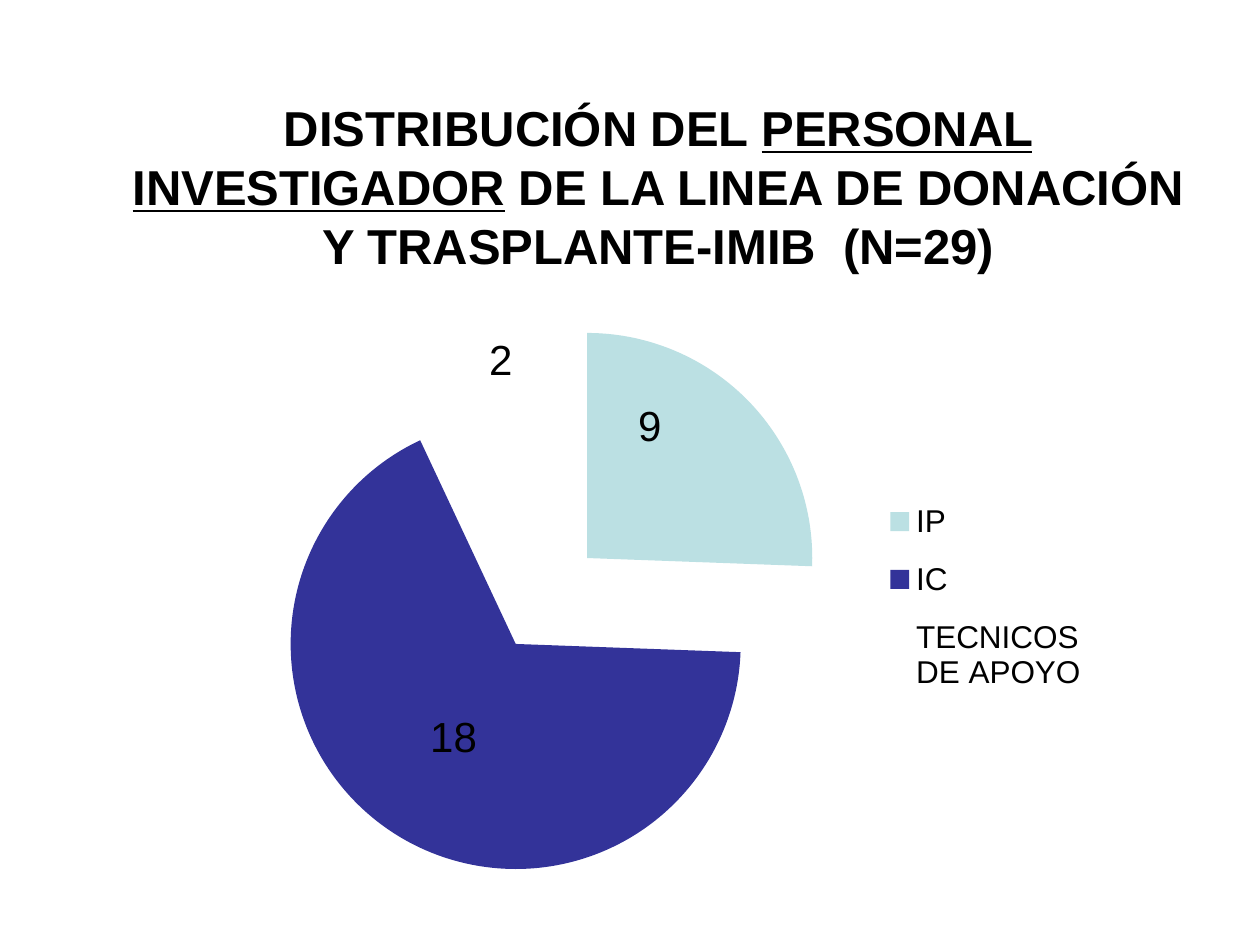
from lxml import etree
from pptx import Presentation
from pptx.chart.data import CategoryChartData
from pptx.dml.color import RGBColor
from pptx.enum import chart as charts, text
from pptx.oxml.ns import qn
from pptx.util import Cm, Pt

FONT = "Arial"
BLACK = "000000"
# category, value, label, slice colour, label offset from the slice centre
SLICES = [
    ("IP", 11, "9", "BBE0E3", (-0.02, -0.09)),
    ("IC", 29, "18", "333399", None),
    ("TECNICOS DE APOYO", 3, "2", "FFFFFF", (-0.01, -0.12)),
]


def rgb(color):
    return RGBColor.from_string(color)


def style_font(font, size, color=BLACK, bold=False, underline=False):
    font.name = FONT
    font.size = Pt(size)
    font.color.rgb = rgb(color)
    font.bold = bold
    font.underline = underline


def add_run(p, content, **style):
    r = p.add_run()
    r.text = content
    style_font(r.font, **style)


def make_layout(**settings):
    """Build a manual chart layout from its settings, in schema order."""
    layout = etree.Element(qn("c:layout"))
    manual = etree.SubElement(layout, qn("c:manualLayout"))
    for name, value in settings.items():
        etree.SubElement(manual, qn(f"c:{name}")).set("val", str(value))
    return layout


def add_title(slide):
    sp = slide.shapes.add_textbox(Cm(2.27), Cm(1.83), Cm(22), Cm(3.84))
    tf = sp.text_frame
    tf.word_wrap = True
    tf.vertical_anchor = text.MSO_ANCHOR.MIDDLE
    p = tf.paragraphs[0]
    p.alignment = text.PP_ALIGN.CENTER
    add_run(p, "DISTRIBUCIÓN DEL ", size=28, bold=True)
    add_run(p, "PERSONAL INVESTIGADOR", size=28, bold=True, underline=True)
    add_run(p, " DE LA LINEA DE DONACIÓN Y TRASPLANTE-IMIB  (N=29)", size=28, bold=True)


def style_slices(series):
    labels = series.data_labels
    labels.show_value = True
    style_font(labels.font, 24, bold=True)
    for i, (_, _, label, color, offset) in enumerate(SLICES):
        point = series.points[i]
        point.format.fill.solid()
        point.format.fill.fore_color.rgb = rgb(color)
        point.format.line.fill.background()
        data_label = point.data_label
        add_run(data_label.text_frame.paragraphs[0], label, size=24)
        data_label.position = charts.XL_LABEL_POSITION.CENTER
        if offset:
            idx = series._element.findall(".//" + qn("c:dLbl") + "/" + qn("c:idx"))[i]
            idx.addnext(make_layout(x=offset[0], y=offset[1]))
    explosion = etree.Element(qn("c:explosion"), val="25")
    series._element.find(qn("c:dPt")).addprevious(explosion)


def add_staff_pie(slide):
    data = CategoryChartData()
    data.categories = [row[0] for row in SLICES]
    data.add_series("Series 1", [row[1] for row in SLICES])
    chart = slide.shapes.add_chart(
        charts.XL_CHART_TYPE.PIE, Cm(4.32), Cm(5.77), Cm(18.62), Cm(11.94), data
    ).chart
    chart.has_title = False
    style_font(chart.font, 18)

    plot = chart.plots[0]
    plot.vary_by_categories = True
    style_slices(plot.series[0])

    area = chart._chartSpace.find(".//" + qn("c:plotArea"))
    for old in area.findall(qn("c:layout")):
        area.remove(old)
    area.insert(0, make_layout(layoutTarget="inner", xMode="edge", yMode="edge",
                               x=0.02, y=0.05, w=0.68, h=0.95))

    chart.has_legend = True
    legend = chart.legend
    legend.position = charts.XL_LEGEND_POSITION.RIGHT
    legend.include_in_layout = False
    style_font(legend.font, 18)
    for old in legend._element.findall(qn("c:layout")):
        legend._element.remove(old)
    legend._element.find(qn("c:legendPos")).addnext(
        make_layout(xMode="edge", yMode="edge", x=0.71, y=0.33, w=0.25, h=0.39))


def main():
    prs = Presentation()
    prs.slide_width, prs.slide_height = Cm(25.4), Cm(19.05)
    slide = prs.slides.add_slide(prs.slide_layouts[6])
    add_staff_pie(slide)
    add_title(slide)
    prs.save("out.pptx")


if __name__ == "__main__":
    main()
